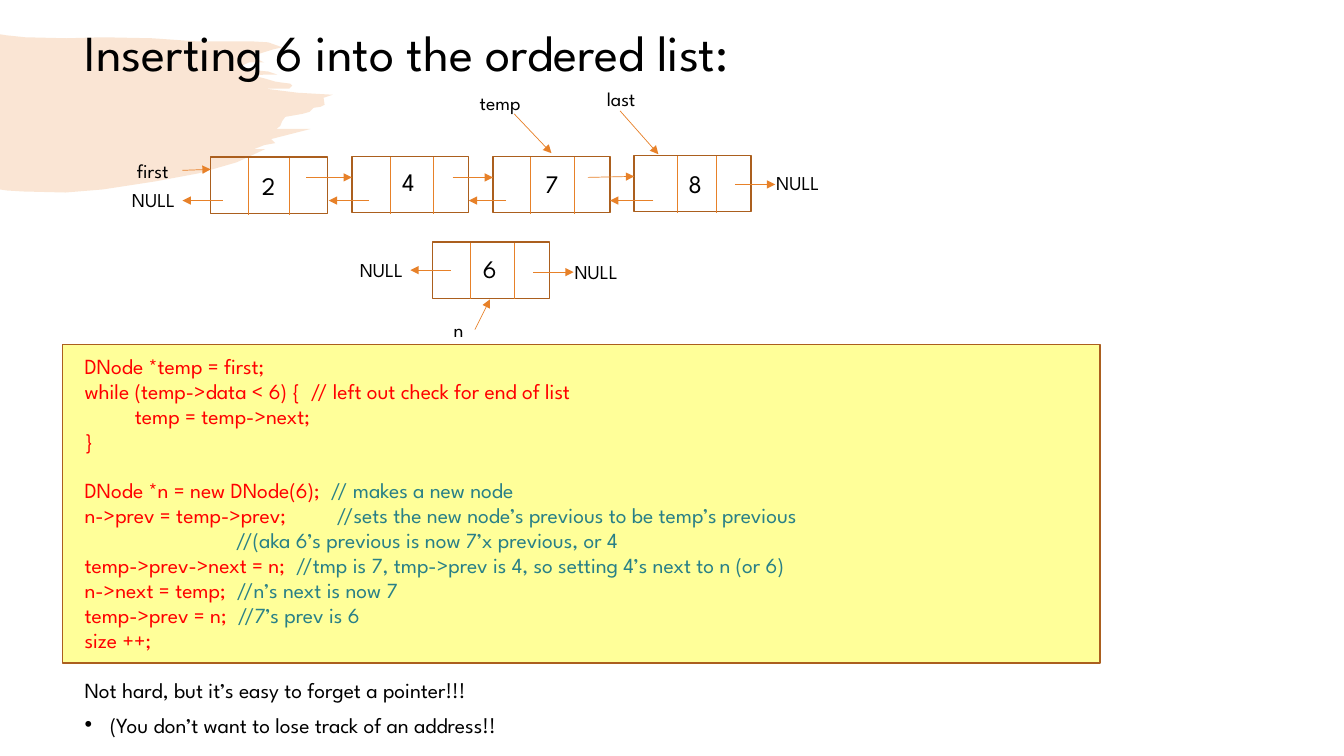
import lxml.etree
import pptx
import pptx.dml.color
import pptx.enum.shapes
import pptx.enum.text
import pptx.oxml.ns
import pptx.util

Inches = pptx.util.Inches
Pt = pptx.util.Pt
qn = pptx.oxml.ns.qn

FONT = "League Spartan"
BLACK, RED, TEAL = "000000", "FF0000", "298087"
ORANGE, BROWN, YELLOW = "E78129", "AB5F1E", "FFFF99"
NODE_WIDTH, NODE_HEIGHT, NODE_STEP = 1.16, 0.56, 1.4
CODE_SIZE, CODE_GAP, BLOCK_GAP = 15.4, 3, 20.9

BRUSH_EDGE = [
    (0, 0.34), (0.06, 0.35), (0.25, 0.37), (0.66, 0.38), (1.02, 0.37), (1.51, 0.38),
    (1.94, 0.41), (2.48, 0.41), (2.66, 0.42), (2.8, 0.47), (2.71, 0.49), (2.55, 0.54),
    (2.53, 0.57), (2.56, 0.59), (2.62, 0.62), (2.47, 0.62), (2.38, 0.66), (2.46, 0.68),
    (2.56, 0.7), (2.66, 0.71), (2.75, 0.74), (2.63, 0.74), (2.51, 0.75), (2.63, 0.78),
    (2.73, 0.81), (2.8, 0.82), (2.88, 0.83), (2.9, 0.85), (2.87, 0.88), (2.84, 0.88),
    (2.63, 0.88), (2.95, 0.92), (3.3, 0.94), (3.21, 0.97), (3.22, 1.04), (3.18, 1.06),
    (3.11, 1.07), (3.07, 1.11), (3, 1.13), (2.83, 1.16), (2.8, 1.2), (2.78, 1.25),
    (2.74, 1.28), (3.08, 1.28), (2.69, 1.38), (2.73, 1.42), (2.62, 1.44), (2.52, 1.48),
    (2.63, 1.48), (2.35, 1.61), (1.97, 1.72), (1.54, 1.8), (1.02, 1.88), (0.65, 1.91),
    (0.23, 1.9), (0.07, 1.89), (0, 1.88),
]

# Value, top, the two divider offsets, then the offset of the value's box
LIST_NODES = [
    ("2", 1.56, (0.37, 0.78), (0.41, 0.08)),
    ("4", 1.55, (0.38, 0.81), (0.4, 0.05)),
    ("7", 1.55, (0.37, 0.81), (0.42, 0.07)),
    ("8", 1.54, (0.43, 0.82), (0.44, 0.08)),
]
NEW_NODE = ("6", 2.4, (0.38, 0.81), (0.4, 0.06))

LIST_LABELS = [
    ("first", 1.26, 1.53, 0.56), ("NULL", 1.21, 1.82, 0.65), ("NULL", 7.6, 1.65, 0.65),
    ("temp", 4.66, 0.85, 0.66), ("last", 5.92, 0.81, 0.56),
]
LIST_ARROWS = [
    (1.81, 1.69, 2.09, 1.68), (3.04, 1.76, 3.49, 1.76), (4.49, 1.76, 4.89, 1.76),
    (5.83, 1.76, 6.29, 1.75), (7.29, 1.83, 7.69, 1.83), (2.21, 1.99, 1.81, 1.99),
    (3.66, 1.99, 3.26, 1.99), (5.02, 1.99, 4.65, 1.99), (6.48, 1.99, 6.05, 1.99),
    (5.1, 1.13, 5.47, 1.52), (6.15, 1.1, 6.53, 1.53),
]
NEW_LABELS = [("NULL", 3.47, 2.51, 0.65), ("NULL", 5.6, 2.53, 0.65), ("n", 4.4, 3.1, 0.31)]
NEW_ARROWS = [(4.47, 2.68, 4.07, 2.68), (5.29, 2.7, 5.69, 2.7), (4.71, 3.27, 4.86, 2.97)]

# Code, comment, space before
CODE_LINES = [
    ("DNode *temp = first;", "", CODE_GAP),
    ("while (temp->data < 6) {  // left out check for end of list", "", CODE_GAP),
    ("\ttemp = temp->next;", "", CODE_GAP),
    ("}", "", CODE_GAP),
    ("DNode *n = new DNode(6);  ", "// makes a new node", BLOCK_GAP),
    ("n->prev = temp->prev;  \t", "//sets the new node’s previous to be temp’s previous", CODE_GAP),
    ("\t\t\t", "//(aka 6’s previous is now 7’x previous, or 4", CODE_GAP),
    ("temp->prev->next = n;  ", "//tmp is 7, tmp->prev is 4, so setting 4’s next to n (or 6)", CODE_GAP),
    ("n->next = temp;  ", "//n’s next is now 7", CODE_GAP),
    ("temp->prev = n;  ", "//7’s prev is 6", CODE_GAP),
    ("size ++;", "", CODE_GAP),
]


def color(value):
    return pptx.dml.color.RGBColor.from_string(value)


def add_span(para, text, size, ink=BLACK):
    span = para.add_run()
    span.text = text
    for name, value in {"name": FONT, "size": Pt(size)}.items():
        setattr(span.font, name, value)
    span.font.color.rgb = color(ink)


def add_text_frame(page, left, top, width, height):
    box = page.shapes.add_textbox(Inches(left), Inches(top), Inches(width), Inches(height))
    box.text_frame.word_wrap = True
    return box.text_frame


def add_label(page, text, left, top, width, height=0.34, size=14):
    frame = add_text_frame(page, left, top, width, height)
    add_span(frame.paragraphs[0], text, size)
    return frame


def add_box(page, left, top, width, height, fill=None):
    box = page.shapes.add_shape(
        pptx.enum.shapes.MSO_SHAPE.RECTANGLE,
        Inches(left), Inches(top), Inches(width), Inches(height))
    box.shadow.inherit = False
    if fill:
        box.fill.solid()
        box.fill.fore_color.rgb = color(fill)
    else:
        box.fill.background()
    box.line.color.rgb = color(BROWN)
    box.line.width = Pt(1)


def add_line(page, x1, y1, x2, y2, arrow=False):
    line = page.shapes.add_connector(
        pptx.enum.shapes.MSO_CONNECTOR.STRAIGHT,
        Inches(x1), Inches(y1), Inches(x2), Inches(y2))
    line.line.color.rgb = color(ORANGE)
    line.line.width = Pt(0.5)
    if arrow:
        lxml.etree.SubElement(line.line._get_or_add_ln(), qn("a:tailEnd"), type="triangle")
    lxml.etree.SubElement(line._element.spPr, qn("a:effectLst"))


def add_brush(page):
    """Draw the pale brush stroke behind the title."""
    start, *rest = [(Inches(x), Inches(y)) for x, y in BRUSH_EDGE]
    builder = page.shapes.build_freeform(*start)
    builder.add_line_segments(rest, close=True)
    brush = builder.convert_to_shape()
    brush.shadow.inherit = False
    brush.fill.solid()
    brush.fill.fore_color.rgb = color(ORANGE)
    brush.line.fill.background()
    tint = brush._element.spPr.find(qn("a:solidFill"))[0]
    lxml.etree.SubElement(tint, qn("a:alpha"), val="20000")


def add_title(page, left, top, width, height):
    frame = add_label(page, "Inserting 6 into the ordered list:", left, top, width, height, 36)
    frame.vertical_anchor = pptx.enum.text.MSO_ANCHOR.MIDDLE
    frame.paragraphs[0].line_spacing = 0.9


def add_node(page, left, value, top, dividers, value_offset):
    add_box(page, left, top, NODE_WIDTH, NODE_HEIGHT)
    for offset in dividers:
        add_line(page, left + offset, top + 0.01, left + offset, top + NODE_HEIGHT + 0.01)
    dx, dy = value_offset
    add_label(page, value, left + dx, top + dy, 0.34, 0.4, 18)


def add_links(page, labels, arrows):
    for label in labels:
        add_label(page, *label)
    for ends in arrows:
        add_line(page, *ends, arrow=True)


def add_list_diagram(page, left):
    for index, node in enumerate(LIST_NODES):
        add_node(page, left + index * NODE_STEP, *node)
    add_links(page, LIST_LABELS, LIST_ARROWS)


def add_new_node(page, left):
    add_node(page, left, *NEW_NODE)
    add_links(page, NEW_LABELS, NEW_ARROWS)


def add_code(page, left, top, width, height):
    """Fill a box with the code, then the two closing remarks."""
    frame = add_text_frame(page, left, top, width, height)

    def add_para(gap):
        para = frame.add_paragraph() if frame.paragraphs[0].runs else frame.paragraphs[0]
        for name, value in {"line_spacing": 0.8, "space_before": Pt(gap)}.items():
            setattr(para, name, value)
        return para

    for code, comment, gap in CODE_LINES:
        para = add_para(gap)
        add_span(para, code, CODE_SIZE, RED)
        if comment:
            add_span(para, comment, CODE_SIZE, TEAL)
    add_span(add_para(BLOCK_GAP), "Not hard, but it’s easy to forget a pointer!!!", CODE_SIZE)
    bullet = add_para(10)
    add_span(bullet, "(You don’t want to lose track of an address!!", CODE_SIZE)
    props = bullet._p.get_or_add_pPr()
    props.set("marL", str(Inches(0.25)))
    props.set("indent", str(-Inches(0.25)))
    lxml.etree.SubElement(props, qn("a:buFont"), typeface="Arial")
    lxml.etree.SubElement(props, qn("a:buChar"), char="•")


def main():
    deck = pptx.Presentation()
    deck.slide_width, deck.slide_height = Inches(13.33), Inches(7.5)
    page = deck.slides.add_slide(deck.slide_layouts[6])
    add_brush(page)
    add_box(page, 0.62, 3.42, 10.29, 3.16, YELLOW)
    add_title(page, 0.74, 0.1, 7.59, 0.9)
    add_code(page, 0.74, 3.5, 10.19, 3.9)
    add_list_diagram(page, 2.09)
    add_new_node(page, 4.29)
    deck.save("out.pptx")


if __name__ == "__main__":
    main()
